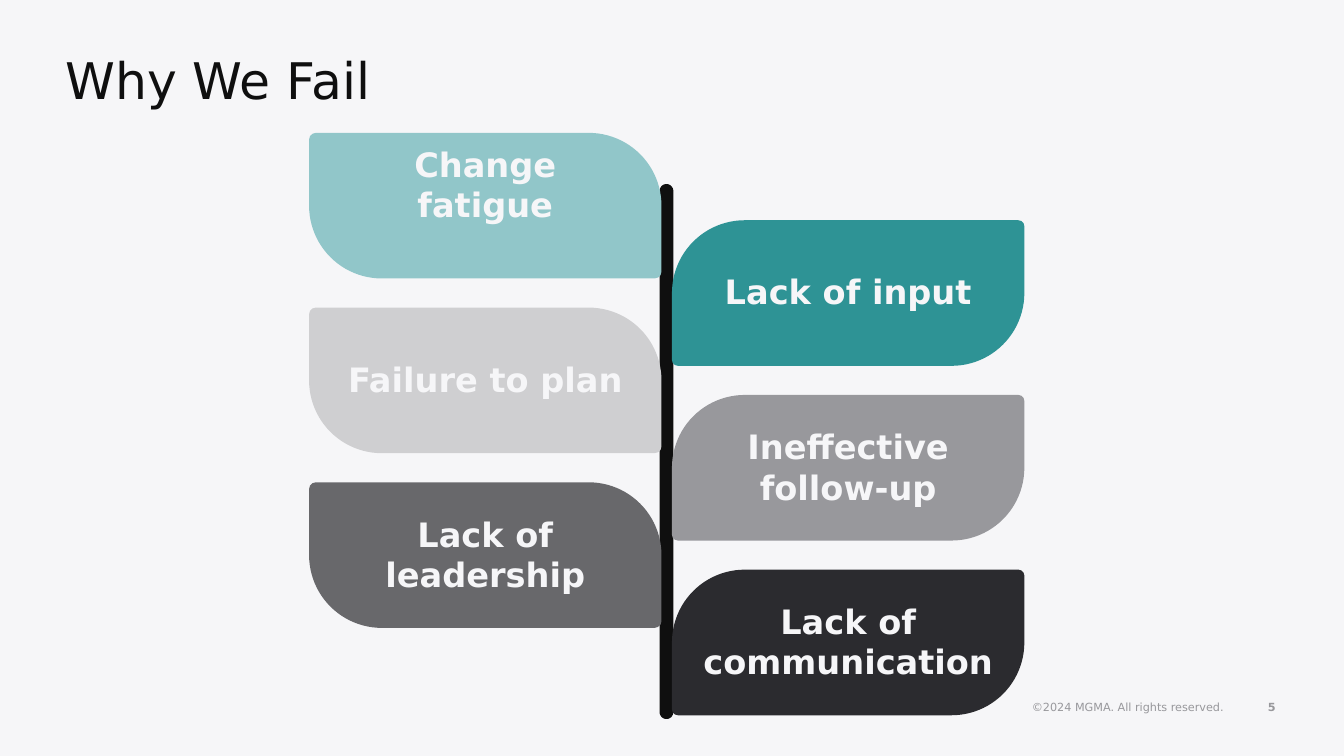
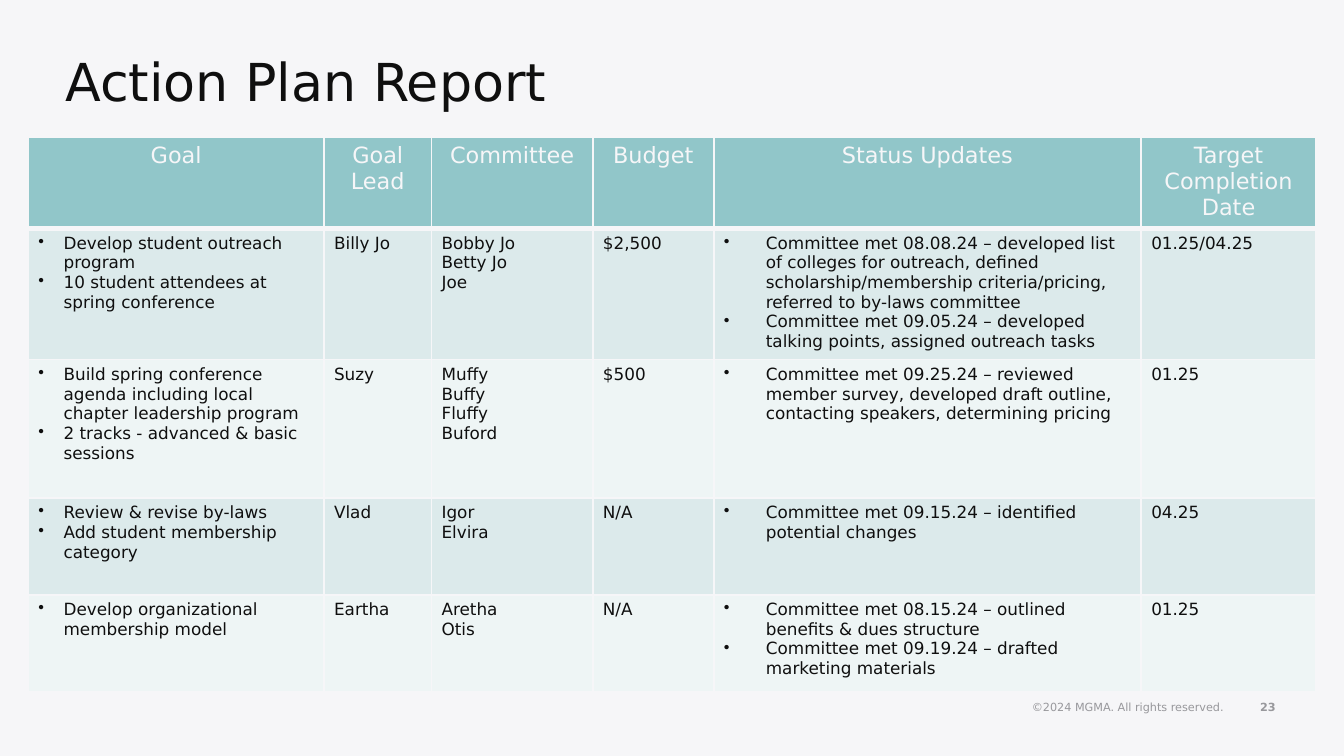
from lxml import etree
from pptx import Presentation
from pptx.dml.color import RGBColor
from pptx.enum.shapes import MSO_SHAPE
from pptx.enum.text import MSO_ANCHOR as ANCHOR, MSO_AUTO_SIZE as AUTO, PP_ALIGN as ALIGN
from pptx.oxml.ns import qn
from pptx.util import Pt

COLORS = {
    "paper": "F6F6F8", "ink": "0F0F0F", "footer": "98989C",
    "mint": "91C6C9", "teal": "2E9395", "silver": "CFCFD1",
    "gray": "98989C", "slate": "68686B", "coal": "2B2B2F",
    "odd_row": "DCEAEB", "even_row": "EEF5F5",
}
RGB = {name: RGBColor.from_string(value) for name, value in COLORS.items()}
STYLES = {
    "title": {"size": Pt(28), "color": "ink", "spacing": 0.9},
    "footer": {"size": Pt(6), "color": "footer", "align": ALIGN.RIGHT},
    "page": {"size": Pt(6), "color": "footer", "align": ALIGN.RIGHT, "bold": True},
    "leaf": {"size": Pt(18), "color": "paper", "align": ALIGN.CENTER, "bold": True},
    "header": {"size": Pt(12), "color": "paper", "align": ALIGN.CENTER},
    "body": {"size": Pt(9), "color": "ink"},
}


def write(frame, text, style, bullet_indent=None, **changes):
    """Fill a text frame, one paragraph per line, in a named style."""
    look = {**STYLES[style], **changes}
    frame.text = text
    for paragraph in frame.paragraphs:
        if bullet_indent:
            props = paragraph._p.get_or_add_pPr()
            props.set("marL", str(Pt(bullet_indent)))
            props.set("indent", str(-Pt(bullet_indent)))
            etree.SubElement(props, qn("a:buChar")).set("char", "•")
        paragraph.alignment = look.get("align", ALIGN.LEFT)
        if "spacing" in look:
            paragraph.line_spacing = look["spacing"]
        for run in paragraph.runs:
            font = {"name": "DejaVu Sans", "size": look["size"], "bold": look.get("bold", False)}
            for key, value in font.items():
                setattr(run.font, key, value)
            run.font.color.rgb = RGB[look["color"]]


def add_text(shapes, place, text, style, frame_format, **changes):
    frame = shapes.add_textbox(*map(Pt, place)).text_frame
    for key, value in {"word_wrap": True, **frame_format}.items():
        setattr(frame, key, value)
    write(frame, text, style, **changes)


deck = Presentation()
deck.slide_width, deck.slide_height = Pt(720), Pt(405)

# Title, footer and background of every slide
slides = []
for title, title_size, page in [("Why We Fail", 27, "5"), ("Action Plan Report", 28, "23")]:
    slide = deck.slides.add_slide(deck.slide_layouts[6])
    slide.background.fill.solid()
    slide.background.fill.fore_color.rgb = RGB["paper"]
    middle = {"vertical_anchor": ANCHOR.MIDDLE}
    add_text(slide.shapes, (461.5, 368, 201, 21.6), "©2024 MGMA. All rights reserved.", "footer", middle)
    add_text(slide.shapes, (647.3, 368, 43.2, 21.6), page, "page", middle)
    add_text(slide.shapes, (28, 26.6, 484.6, 41), title, "title", {}, size=Pt(title_size))
    slides.append(slide)
fail_slide, plan_slide = slides

# Why We Fail: a stem with leaves on alternating sides
stem = fail_slide.shapes.add_shape(
    MSO_SHAPE.ROUNDED_RECTANGLE, Pt(355.6), Pt(100.8), Pt(2.9), Pt(282.2))
stem.shadow.inherit = False
stem.adjustments[0] = 0.5
stem.fill.solid()
stem.fill.fore_color.rgb = stem.line.color.rgb = RGB["ink"]
stem.line.width = Pt(4.5)

LEAF_W, LEAF_H, LEAF_TOP, LEAF_STEP = 188.8, 78, 71.2, 46.8
SIDES = [(165.6, (0.047, 0.5)), (360, (0.5, 0.041))]
reasons = [
    ("Change\vfatigue", "mint", 169),
    ("Lack of input", "teal", 147),
    ("Failure to plan", "silver", 162),
    ("Ineffective\nfollow-up", "gray", 127),
    ("Lack of\nleadership", "slate", 122),
    ("Lack of\ncommunication", "coal", 171),
]
for i, (reason, color, label_w) in enumerate(reasons):
    left, corners = SIDES[i % 2]
    top = LEAF_TOP + i * LEAF_STEP
    group = fail_slide.shapes.add_group_shape()
    leaf = group.shapes.add_shape(
        MSO_SHAPE.ROUND_2_DIAG_RECTANGLE, Pt(left), Pt(top), Pt(LEAF_W), Pt(LEAF_H))
    leaf.shadow.inherit = False
    leaf.adjustments[0], leaf.adjustments[1] = corners
    leaf.fill.solid()
    leaf.fill.fore_color.rgb = RGB[color]
    leaf.line.fill.background()
    label_h = 29 + 22 * reason.count("\n")
    place = (left + (LEAF_W - label_w) / 2, top + (LEAF_H - label_h) / 2 - 1, label_w, label_h)
    add_text(group.shapes, place, reason, "leaf", {
        "word_wrap": False, "auto_size": AUTO.SHAPE_TO_FIT_TEXT, "vertical_anchor": ANCHOR.BOTTOM})

# Action Plan Report: one table
plan = [
    ("Goal", "Goal\nLead", "Committee", "Budget", "Status Updates", "Target Completion Date"),
    ("Develop student outreach program\n10 student attendees at spring conference",
     "Billy Jo", "Bobby Jo\nBetty Jo\nJoe", "$2,500",
     "Committee met 08.08.24 – developed list of colleges for outreach, defined "
     "scholarship/membership criteria/pricing, referred to by-laws committee\n"
     "Committee met 09.05.24 – developed talking points, assigned outreach tasks",
     "01.25/04.25"),
    ("Build spring conference agenda including local chapter leadership program\n"
     "2 tracks - advanced & basic sessions",
     "Suzy", "Muffy\nBuffy\nFluffy\nBuford", "$500",
     "Committee met 09.25.24 – reviewed member survey, developed draft outline, "
     "contacting speakers, determining pricing",
     "01.25"),
    ("Review & revise by-laws\nAdd student membership category",
     "Vlad", "Igor\nElvira", "N/A",
     "Committee met 09.15.24 – identified potential changes", "04.25"),
    ("Develop organizational membership model",
     "Eartha", "Aretha\nOtis", "N/A",
     "Committee met 08.15.24 – outlined benefits & dues structure\n"
     "Committee met 09.19.24 – drafted marketing materials",
     "01.25"),
]
COLUMN_WIDTHS = [158.4, 57.6, 86.4, 64.8, 229, 93.6]
ROW_HEIGHTS = [46.8, 62, 74.2, 51.8, 51.8]
BULLET_INDENTS = {0: 13.5, 4: 22.5}
CELL_MARGINS = {"margin_left": 5.4, "margin_right": 5.4, "margin_top": 2.7, "margin_bottom": 2.7}

table = plan_slide.shapes.add_table(
    len(plan), len(COLUMN_WIDTHS), Pt(15.2), Pt(73.7),
    Pt(sum(COLUMN_WIDTHS)), Pt(sum(ROW_HEIGHTS))).table
for column, width in zip(table.columns, COLUMN_WIDTHS):
    column.width = Pt(width)
for r, (entries, height) in enumerate(zip(plan, ROW_HEIGHTS)):
    table.rows[r].height = Pt(height)
    row_color = "mint" if r == 0 else ("odd_row" if r % 2 else "even_row")
    for c, entry in enumerate(entries):
        cell = table.cell(r, c)
        for key, value in CELL_MARGINS.items():
            setattr(cell, key, Pt(value))
        cell.fill.solid()
        cell.fill.fore_color.rgb = RGB[row_color]
        if r == 0:
            write(cell.text_frame, entry, "header")
        else:
            write(cell.text_frame, entry, "body", BULLET_INDENTS.get(c))
        for n, side in enumerate(("lnL", "lnR", "lnT", "lnB")):
            border = etree.Element(qn(f"a:{side}"))
            border.set("w", str(Pt(3 if r == 0 and side == "lnB" else 1)))
            solid = etree.SubElement(border, qn("a:solidFill"))
            etree.SubElement(solid, qn("a:srgbClr")).set("val", COLORS["paper"])
            cell._tc.get_or_add_tcPr().insert(n, border)

deck.save("out.pptx")
